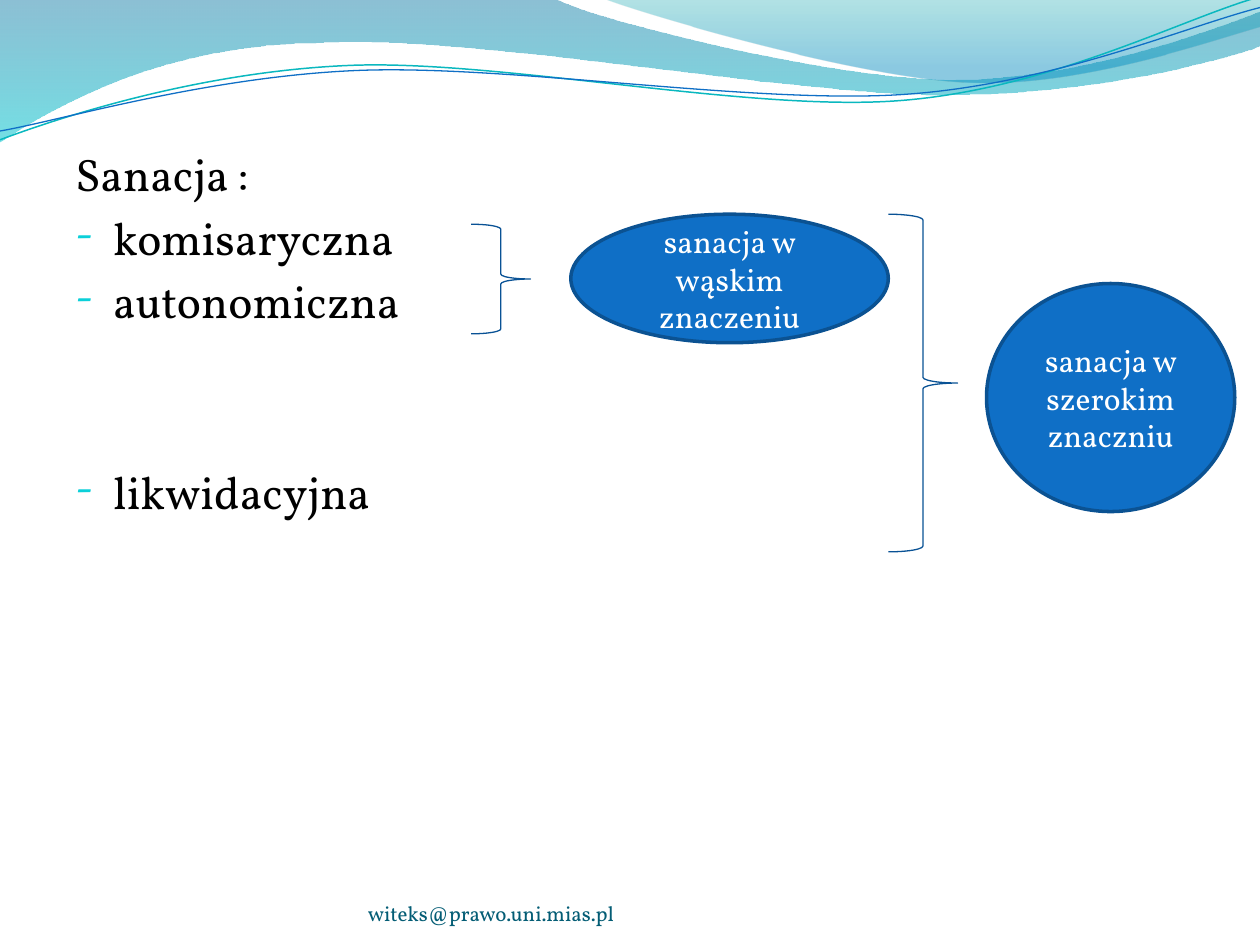
from lxml import etree
from pptx import Presentation
from pptx.dml.color import RGBColor
from pptx.enum.shapes import MSO_SHAPE
from pptx.enum.text import MSO_ANCHOR, PP_ALIGN
from pptx.oxml.ns import qn
from pptx.util import Inches, Pt

ELLIPSE, BRACE = MSO_SHAPE.OVAL, MSO_SHAPE.RIGHT_BRACE
TOP, MIDDLE, BOTTOM = MSO_ANCHOR.TOP, MSO_ANCHOR.MIDDLE, MSO_ANCHOR.BOTTOM
LEFT, CENTER = PP_ALIGN.LEFT, PP_ALIGN.CENTER
FONT = "Vollkorn"
UNITS = 1000

WAVES = [
    dict(start=(0, -0.01), closed=True,
         segments=[(4.4, -0.01), (4.76, 0.17, 6.64, 0.63, 7.58, 0.63),
                   (8.53, 0.63, 9.58, 0.26, 10, 0.09), (10.01, 0.36),
                   (9.83, 0.44, 8.7, 0.76, 7.46, 0.75),
                   (6.22, 0.75, 3.82, 0.28, 2.57, 0.34),
                   (1.29, 0.35, 0.46, 0.83, -0.01, 1.13)],
         stops=[(0, "0074A1", 45), (1, "00C6CF", 55)]),
    dict(start=(4.79, -0.01), closed=True,
         segments=[(5.09, 0.11, 6.82, 0.62, 7.69, 0.65),
                   (8.56, 0.69, 9.61, 0.32, 10, 0.21), (10, 0)],
         stops=[(0, "00A1A9", 30), (0.8, "008BBF", 45)]),
    dict(start=(0, 1.11), closed=False,
         segments=[(0.48, 0.93, 1.58, 0.57, 2.77, 0.52),
                   (3.95, 0.47, 5.93, 0.89, 7.13, 0.8),
                   (8.33, 0.71, 9.38, 0.15, 9.98, -0.02)],
         line=("0AB8BF", 0.85)),
    dict(start=(0, 1.04), closed=False,
         segments=[(0.47, 0.96, 1.64, 0.61, 2.83, 0.56),
                   (4.03, 0.51, 5.97, 0.83, 7.17, 0.75),
                   (8.36, 0.67, 9.41, 0.21, 10, 0.06)],
         line=("0F6FC6", 0.75)),
]
TYPES = [("Sanacja :", False, 0), ("komisaryczna", True, 5.2),
         ("autonomiczna", True, 5.2), ("likwidacyjna", True, 78)]
BRACES = [(3.74, 1.78, 0.47, 0.87), (7.05, 1.7, 0.55, 2.68)]
MEANINGS = [("sanacja w wąskim znaczeniu", (4.53, 1.7, 2.52, 1.02)),
            ("sanacja w szerokim znaczniu", (7.83, 2.25, 1.97, 1.81))]
FOOTER = "witeks@prawo.uni.mias.pl"


def rgb(value):
    return RGBColor.from_string(value)


def box(values):
    return [Inches(v) for v in values]


def set_line(s, color, width):
    s.line.color.rgb = rgb(color)
    s.line.width = Pt(width)


def bend(s, segments, left, top):
    lines = list(s.element.spPr.iter(qn("a:lnTo")))
    for line, segment in zip(lines, segments):
        if len(segment) == 2:
            continue
        line.tag = qn("a:cubicBezTo")
        for i in (0, 2):
            pt = etree.Element(qn("a:pt"),
                               x=str(round((segment[i] - left) * UNITS)),
                               y=str(round((segment[i + 1] - top) * UNITS)))
            line.insert(i // 2, pt)


def add_wave(shapes, start, segments, closed, stops=None, line=None):
    points = [start] + [segment[-2:] for segment in segments]
    scaled = [(round(x * UNITS), round(y * UNITS)) for x, y in points]
    fb = shapes.build_freeform(*scaled[0], scale=Inches(1) / UNITS)
    fb.add_line_segments(scaled[1:], close=closed)
    s = fb.convert_to_shape()
    bend(s, segments, min(x for x, _ in points), min(y for _, y in points))
    s.shadow.inherit = False
    if line:
        s.fill.background()
        set_line(s, *line)
        return
    s.line.fill.background()
    s.fill.gradient()
    s.fill.gradient_angle = 270
    for stop, (position, color, _) in zip(s.fill.gradient_stops, stops):
        stop.position = position
        stop.color.rgb = rgb(color)
    for clr, (_, _, opacity) in zip(s.element.spPr.iter(qn("a:srgbClr")), stops):
        etree.SubElement(clr, qn("a:alpha"), val=str(opacity * 1000))


def add_shape(shapes, kind, at, line, fill=None):
    s = shapes.add_shape(kind, *box(at))
    s.shadow.inherit = False
    set_line(s, *line)
    if fill:
        s.fill.solid()
        s.fill.fore_color.rgb = rgb(fill)
    else:
        s.fill.background()
    return s


def add_bullet(p):
    pPr = p._p.get_or_add_pPr()
    color = etree.SubElement(pPr, qn("a:buClr"))
    etree.SubElement(color, qn("a:srgbClr"), val="0BD0D9")
    etree.SubElement(pPr, qn("a:buSzPct"), val="95000")
    etree.SubElement(pPr, qn("a:buFont"), typeface=FONT)
    etree.SubElement(pPr, qn("a:buChar"), char="-")
    pPr.set("marL", str(Inches(0.3)))
    pPr.set("indent", str(Inches(-0.3)))


def write(p, text, size, color, align=LEFT, before=0, bullet=False):
    p.alignment = align
    p.space_before = Pt(before)
    if bullet:
        add_bullet(p)
    r = p.add_run()
    r.text = text
    r.font.size = Pt(size)
    r.font.name = FONT
    r.font.color.rgb = rgb(color)


def text_frame(s, anchor):
    tf = s.text_frame
    tf.word_wrap = True
    tf.vertical_anchor = anchor
    return tf


def main():
    prs = Presentation()
    prs.slide_width, prs.slide_height = Inches(10), Inches(7.5)
    shapes = prs.slides.add_slide(prs.slide_layouts[6]).shapes

    for wave in WAVES:
        add_wave(shapes, **wave)

    tf = text_frame(shapes.add_textbox(*box((0.5, 1.11, 9, 5.81))), TOP)
    for i, (text, bullet, before) in enumerate(TYPES):
        p = tf.add_paragraph() if i else tf.paragraphs[0]
        write(p, text, 26, "000000", before=before, bullet=bullet)

    tf = text_frame(shapes.add_textbox(*box((2.92, 6.95, 3.67, 0.4))), BOTTOM)
    tf.margin_left = tf.margin_right = tf.margin_top = tf.margin_bottom = 0
    write(tf.paragraphs[0], FOOTER, 12, "045D75")

    for at in BRACES:
        add_shape(shapes, BRACE, at, ("095295", 0.75))
    for text, at in MEANINGS:
        s = add_shape(shapes, ELLIPSE, at, ("0B5292", 2), "0F6FC6")
        tf = text_frame(s, MIDDLE)
        write(tf.paragraphs[0], text, 18, "FFFFFF", align=CENTER)

    prs.save("out.pptx")


if __name__ == "__main__":
    main()
